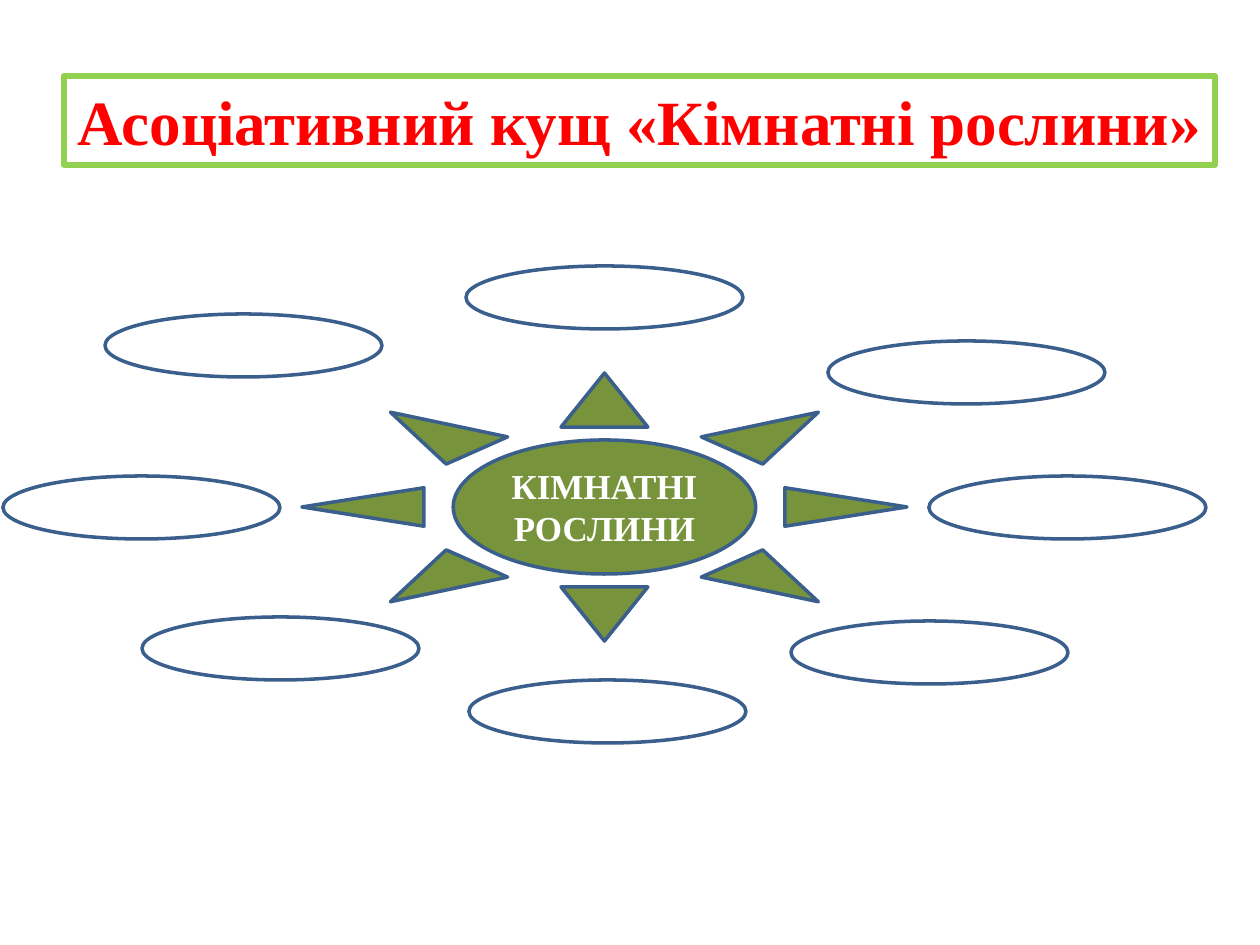
from pptx import Presentation
from pptx import util as u
from pptx.dml.color import RGBColor
from pptx.enum import shapes, text

# Content: boxes are (left, top, width, height) in px
TITLE = "Асоціативний кущ «Кімнатні рослини»"
CORE = "КІМНАТНІ РОСЛИНИ"
PAGE = (1260, 945)
TITLE_BOX = (64, 76, 1151, 89)
SUN_BOX = (302, 373, 605, 268)
BUBBLE = (277, 63)
SPOTS = [(466, 266), (469, 680), (828, 341), (791, 621),
         (929, 476), (142, 617), (3, 476), (105, 314)]

THEME = {
    "font": "Times New Roman",
    "white": "FFFFFF", "red": "FF0000", "blue": "3A5F8C",
    "green": "77933C", "lime": "92D050",
    "head": 36, "core": 20, "edge": 2, "frame": 3,
}
KIND = shapes.MSO_SHAPE


def px(n):
    return u.Emu(round(n * 914400 / 126))


def color(name):
    return RGBColor.from_string(THEME[name])


def draw(slide, kind, box, fill, line="blue", width="edge"):
    shape = slide.shapes.add_shape(kind, *map(px, box))
    shape.shadow.inherit = False
    shape.fill.solid()
    shape.fill.fore_color.rgb = color(fill)
    shape.line.color.rgb = color(line)
    shape.line.width = u.Pt(THEME[width])
    return shape


def write(shape, words, size, ink, anchor, wrap):
    frame = shape.text_frame
    frame.word_wrap = wrap
    frame.vertical_anchor = anchor
    para = frame.paragraphs[0]
    para.text = words
    para.alignment = text.PP_ALIGN.CENTER
    font = para.font
    font.name, font.size, font.bold = THEME["font"], u.Pt(THEME[size]), True
    font.color.rgb = color(ink)


def main():
    deck = Presentation()
    deck.slide_width, deck.slide_height = map(px, PAGE)
    slide = deck.slides.add_slide(deck.slide_layouts[6])

    # Sun with the core idea
    sun = draw(slide, KIND.SUN, SUN_BOX, "green")
    write(sun, CORE, "core", "white", text.MSO_ANCHOR.MIDDLE, True)

    # Framed title
    title = draw(slide, KIND.RECTANGLE, TITLE_BOX, "white", "lime", "frame")
    write(title, TITLE, "head", "red", text.MSO_ANCHOR.TOP, False)
    title.text_frame.auto_size = text.MSO_AUTO_SIZE.SHAPE_TO_FIT_TEXT

    # Empty bubbles for associations
    for spot in SPOTS:
        draw(slide, KIND.OVAL, spot + BUBBLE, "white")

    deck.save("out.pptx")


if __name__ == "__main__":
    main()
